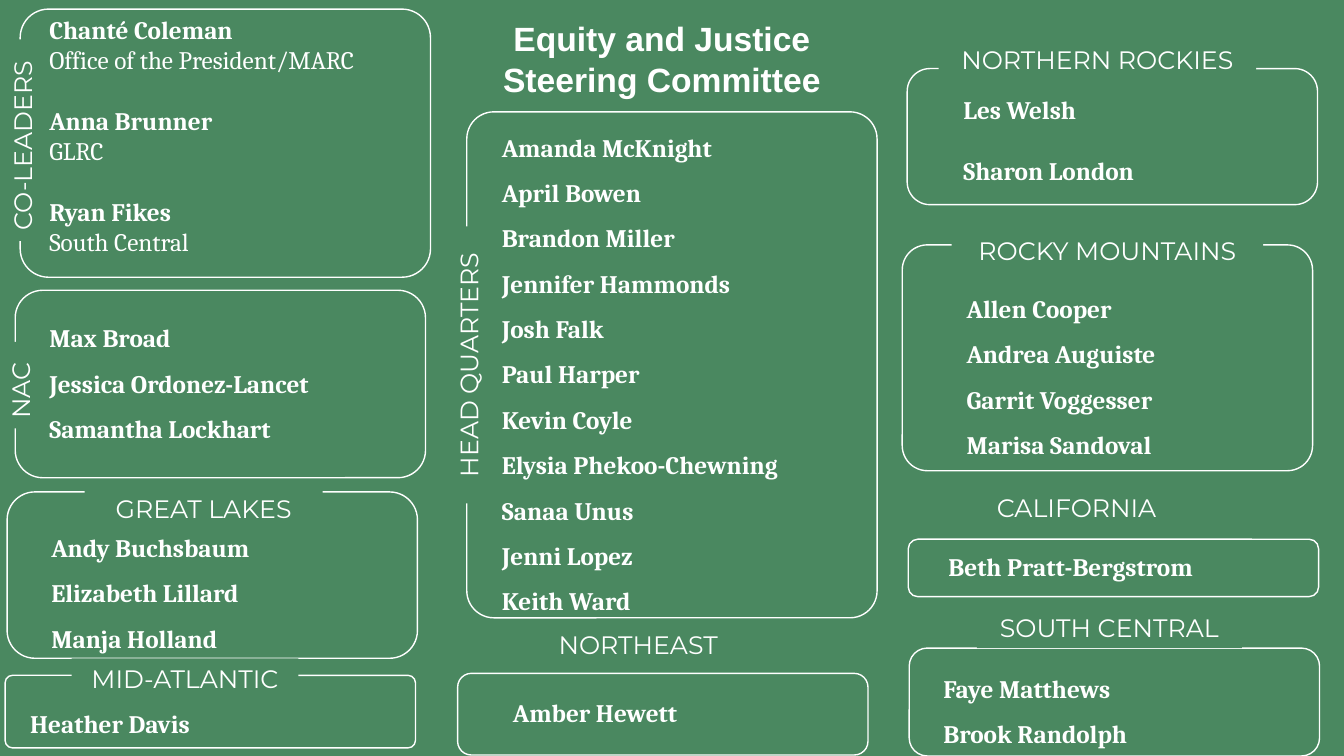
from dataclasses import dataclass

from pptx import Presentation
from pptx.dml.color import RGBColor
from pptx.enum.shapes import MSO_SHAPE as Shape
from pptx.enum.text import MSO_ANCHOR as Anchor, MSO_AUTO_SIZE as AutoSize, PP_ALIGN as Align
from pptx.util import Inches, Pt

WIDTH, HEIGHT = Inches(13.33), Inches(7.5)


@dataclass(frozen=True)
class Theme:
    green: RGBColor = RGBColor(0x4A, 0x88, 0x60)
    white: RGBColor = RGBColor(0xFF, 0xFF, 0xFF)
    title_font: str = "Arial"
    label_font: str = "Montserrat"
    name_font: str = "Cambria"
    title_size: int = 24
    body_size: int = 18
    person_gap: float = 21.7
    outline: int = 1


THEME = Theme()

# Shares of the slide, in percent
PANEL_W = 30.53
LABEL_H = 5.33
LINE_H = 4.03
INSET_H = 1.33


@dataclass(frozen=True)
class Region:
    """panel: x, y, height; label: x, y, width; names: x, y, width."""
    title: str
    panel: tuple
    label: tuple
    names: tuple
    people: tuple
    corner: float = 0.167
    vertical: bool = False
    label_align: Align = Align.CENTER
    spacing: float = 1.0
    gap: float = 0


REGIONS = (
    Region("CO-LEADERS", (1.5, 1.2, 35.47), (-5.85, 15.87, 15), (2.93, 1.2, 30.38),
           (("Chanté Coleman", "Office of the President/MARC"),
            ("Anna Brunner", "GLRC"), ("Ryan Fikes", "South Central")),
           corner=0.106, vertical=True, label_align=Align.LEFT, gap=THEME.person_gap),
    Region("NAC", (1.13, 38.4, 24.8), (-1.73, 48.27, 6.45), (2.93, 40, 29.4),
           (("Max Broad",), ("Jessica Ordonez-Lancet",), ("Samantha Lockhart",)),
           corner=0.147, vertical=True, label_align=Align.LEFT, spacing=1.5),
    Region("GREAT LAKES", (0.53, 65.07, 22), (6.3, 64.53, 17.7), (3.08, 67.73, 29.25),
           (("Andy Buchsbaum",), ("Elizabeth Lillard",), ("Manja Holland",)), spacing=1.5),
    Region("MID-ATLANTIC", (0.38, 89.33, 9.6), (5.33, 87.07, 16.88), (1.5, 93.07, 30.6),
           (("Heather Davis",),), corner=0.102),
    Region("HEAD QUARTERS", (34.73, 14.8, 66.93), (24.53, 45.6, 20.63), (36.6, 14.8, 28.43),
           (("Amanda McKnight",), ("April Bowen",), ("Brandon Miller",),
            ("Jennifer Hammonds",), ("Josh Falk",), ("Paul Harper",), ("Kevin Coyle",),
            ("Elysia Phekoo-Chewning",), ("Sanaa Unus",), ("Jenni Lopez",),
            ("Keith Ward",)),
           corner=0.066, vertical=True, spacing=1.5),
    Region("NORTHEAST", (34.05, 89.07, 10.8), (39.98, 82.53, 15), (37.43, 91.6, 25.05),
           (("Amber Hewett",),)),
    Region("NORTHERN ROCKIES", (67.5, 9.07, 18), (69.83, 5.2, 23.63), (70.95, 11.87, 28.5),
           (("Les Welsh",), ("Sharon London",)), gap=THEME.person_gap),
    Region("ROCKY MOUNTAINS", (67.13, 32.4, 29.87), (70.8, 30.53, 23.18),
           (71.18, 36.13, 25.05),
           (("Allen Cooper",), ("Andrea Auguiste",), ("Garrit Voggesser",),
            ("Marisa Sandoval",)), corner=0.111, spacing=1.5),
    Region("CALIFORNIA", (67.58, 71.33, 7.6), (72.68, 64.4, 14.85), (69.83, 72.27, 28.5),
           (("Beth Pratt-Bergstrom",),)),
    Region("SOUTH CENTRAL", (67.65, 85.73, 14.27), (72.68, 80.4, 19.73),
           (69.45, 86.4, 25.05),
           (("Faye Matthews",), ("Brook Randolph",)), spacing=1.5),
)


def box(x, y, w, h):
    """Turn percentages of the slide into left, top, width, height."""
    return tuple(int(share * side / 100)
                 for share, side in zip((x, y, w, h), (WIDTH, HEIGHT) * 2))


def write(tf, text, *, font, size=THEME.body_size, bold=False, align=Align.LEFT,
          spacing=1.0, before=0):
    """Fill the empty first paragraph, or add another one."""
    p = tf.paragraphs[0] if not tf.text else tf.add_paragraph()
    p.alignment, p.line_spacing, p.space_before = align, spacing, Pt(before)
    r = p.add_run()
    r.text = text
    r.font.name, r.font.size, r.font.bold = font, Pt(size), bold
    r.font.color.rgb = THEME.white


def add_title(s, lines):
    sp = s.shapes.title
    sp.left, sp.top, sp.width, sp.height = box(34.88, 1.73, 28.73, 12.13)
    tf = sp.text_frame
    tf.word_wrap, tf.auto_size, tf.vertical_anchor = True, AutoSize.NONE, Anchor.TOP
    for line in lines:
        write(tf, line, font=THEME.title_font, size=THEME.title_size, bold=True,
              align=Align.CENTER)


def add_panel(s, region):
    x, y, h = region.panel
    sp = s.shapes.add_shape(Shape.ROUNDED_RECTANGLE, *box(x, y, PANEL_W, h))
    sp.shadow.inherit = False
    sp.adjustments[0] = region.corner
    sp.fill.background()
    sp.line.color.rgb = THEME.white
    sp.line.width = Pt(THEME.outline)


def add_label(s, region):
    """Region heading on a green patch that interrupts the panel outline."""
    sp = s.shapes.add_shape(Shape.RECTANGLE, *box(*region.label, LABEL_H))
    sp.shadow.inherit = False
    sp.rotation = 270 if region.vertical else 0
    sp.fill.solid()
    sp.fill.fore_color.rgb = THEME.green
    sp.line.fill.background()
    tf = sp.text_frame
    tf.word_wrap, tf.vertical_anchor = True, Anchor.TOP
    write(tf, region.title, font=THEME.label_font, align=region.label_align)


def add_names(s, region):
    lines = sum(len(person) for person in region.people)
    gaps = (len(region.people) - 1) * bool(region.gap)
    h = (lines + gaps) * LINE_H * region.spacing + INSET_H
    tf = s.shapes.add_textbox(*box(*region.names, h)).text_frame
    tf.word_wrap = True
    for i, (name, *roles) in enumerate(region.people):
        write(tf, name, font=THEME.name_font, bold=True, spacing=region.spacing,
              before=region.gap if i else 0)
        for role in roles:
            write(tf, role, font=THEME.name_font, spacing=region.spacing)


def main():
    prs = Presentation()
    prs.slide_width, prs.slide_height = WIDTH, HEIGHT
    s = prs.slides.add_slide(prs.slide_layouts[5])
    s.background.fill.solid()
    s.background.fill.fore_color.rgb = THEME.green
    add_title(s, ("Equity and Justice", "Steering Committee"))
    for add_part in (add_panel, add_label, add_names):
        for region in REGIONS:
            add_part(s, region)
    prs.save("out.pptx")


if __name__ == "__main__":
    main()
